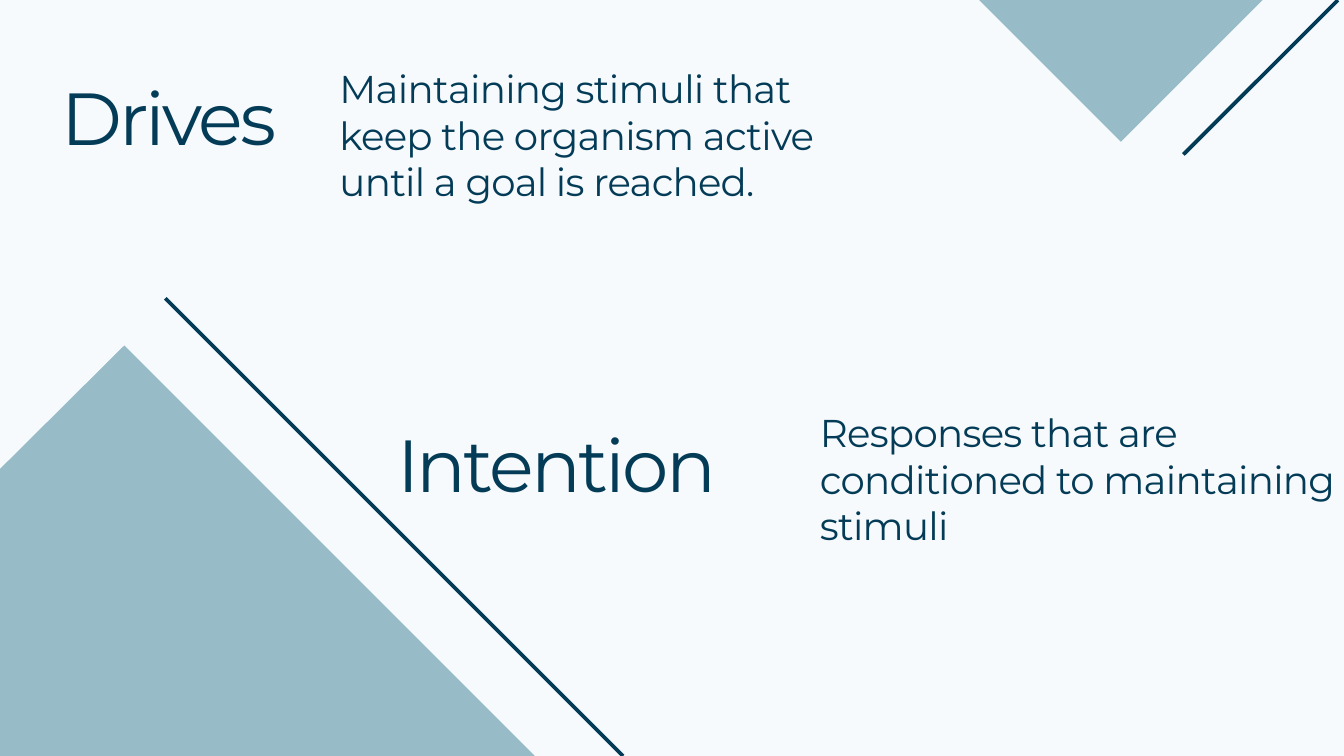
import dataclasses

import lxml.etree
import pptx
import pptx.dml.color
import pptx.enum.shapes
import pptx.enum.text
import pptx.oxml.ns
import pptx.util

Cm = pptx.util.Cm
Pt = pptx.util.Pt
qn = pptx.oxml.ns.qn


@dataclasses.dataclass(frozen=True)
class TextStyle:
    size: float
    spacing: int
    indent: float
    top_inset: float


@dataclasses.dataclass(frozen=True)
class Theme:
    font: str = "Montserrat"
    background: str = "F7FAFD"
    navy: str = "043C57"
    teal: str = "97BCC7"
    line_width: float = 4
    term: TextStyle = TextStyle(79, -300, 0.03, 0.03)
    definition: TextStyle = TextStyle(41.5, -80, 0.36, 0.86)


THEME = Theme()


def rgb(value):
    return pptx.dml.color.RGBColor.from_string(value)


def add_triangle(slide, points):
    corners = [(Cm(x), Cm(y)) for x, y in points]
    builder = slide.shapes.build_freeform(*corners[0])
    builder.add_line_segments(corners[1:], close=True)
    sp = builder.convert_to_shape()
    sp.shadow.inherit = False
    sp.fill.solid()
    sp.fill.fore_color.rgb = rgb(THEME.teal)
    sp.line.fill.background()


def add_line(slide, start, end):
    line = slide.shapes.add_connector(
        pptx.enum.shapes.MSO_CONNECTOR.STRAIGHT,
        *(Cm(v) for v in (*start, *end)))
    line.line.color.rgb = rgb(THEME.navy)
    line.line.width = Pt(THEME.line_width)
    lxml.etree.SubElement(line._element.spPr, qn("a:effectLst"))


def add_textbox(slide):
    return slide.shapes.add_textbox(0, 0, Cm(1), Cm(1))


def write(sp, box, text, style):
    sp.left, sp.top, sp.width, sp.height = (Cm(v) for v in box)
    tf = sp.text_frame
    tf.word_wrap = True
    tf.auto_size = pptx.enum.text.MSO_AUTO_SIZE.SHAPE_TO_FIT_TEXT
    tf.vertical_anchor = pptx.enum.text.MSO_ANCHOR.TOP
    tf.margin_left = tf.margin_right = tf.margin_bottom = 0
    tf.margin_top = Cm(style.top_inset)
    tf.text = text
    p = tf.paragraphs[0]
    p.alignment = pptx.enum.text.PP_ALIGN.LEFT
    p.space_before = Pt(0)
    p.font.name = THEME.font
    p.font.size = Pt(style.size)
    p.font.color.rgb = rgb(THEME.navy)
    pPr = p._p.get_or_add_pPr()
    pPr.set("marL", str(Cm(style.indent)))
    pPr.set("indent", "0")
    defRPr = pPr.find(qn("a:defRPr"))
    defRPr.set("spc", str(style.spacing))
    defRPr.addprevious(lxml.etree.Element(qn("a:buNone")))


def main():
    prs = pptx.Presentation()
    prs.slide_width, prs.slide_height = Cm(50.8), Cm(28.58)
    slide = prs.slides.add_slide(prs.slide_layouts[1])
    slide.background.fill.solid()
    slide.background.fill.fore_color.rgb = rgb(THEME.background)

    add_triangle(slide, [(37.01, 0), (47.73, 0), (42.37, 5.36)])
    add_triangle(slide, [(0, 28.58), (0, 17.73), (4.7, 13.06), (20.22, 28.58)])
    add_line(slide, (50.57, 0), (44.73, 5.84))
    add_line(slide, (6.25, 11.28), (23.55, 28.58))

    title, body = slide.placeholders
    write(title, (2.29, 2.67, 15.65, 3.4), "Drives", THEME.term)
    write(body, (12.47, 1.6, 20.7, 6.2),
          "Maintaining stimuli that keep the organism active until a goal is reached.",
          THEME.definition)
    write(add_textbox(slide), (30.63, 14.61, 20.88, 6.2),
          "Responses that are conditioned to maintaining stimuli",
          THEME.definition)
    write(add_textbox(slide), (14.99, 15.8, 15.65, 3.4), "Intention", THEME.term)

    prs.save("out.pptx")


if __name__ == "__main__":
    main()
